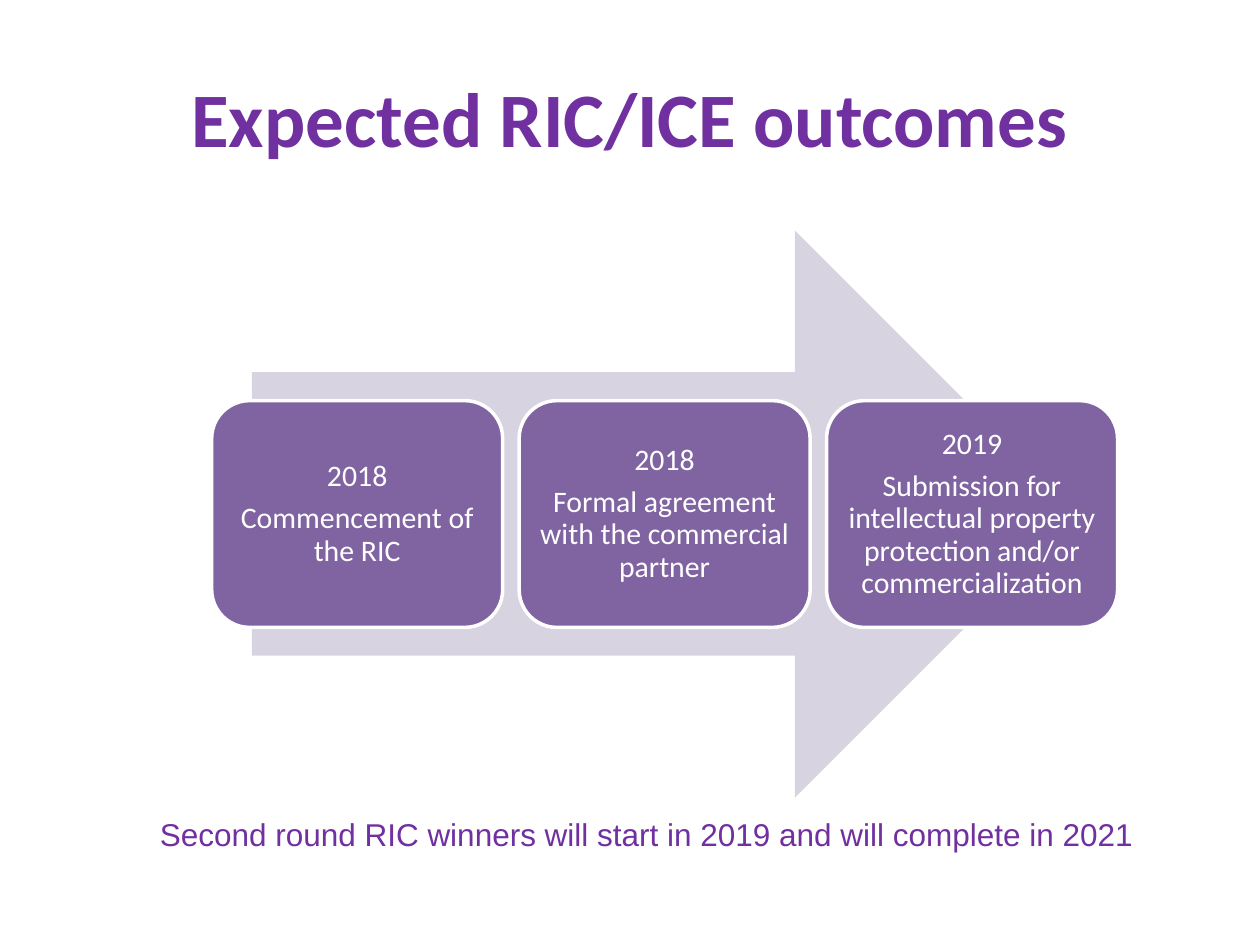
from dataclasses import dataclass

from pptx import Presentation
from pptx.dml.color import RGBColor
from pptx.enum.shapes import MSO_SHAPE as Preset
from pptx.enum.text import MSO_ANCHOR as Anchor, PP_ALIGN as Align
from pptx.shapes.autoshape import Shape
from pptx.slide import Slide
from pptx.text.text import TextFrame
from pptx.util import Inches, Pt

PURPLE = RGBColor(0x70, 0x30, 0xA0)
MILESTONE_FILL = RGBColor(0x80, 0x64, 0xA2)
ARROW_FILL = RGBColor(0xD8, 0xD3, 0xE0)
WHITE = RGBColor(0xFF, 0xFF, 0xFF)

SLIDE_W, SLIDE_H = Inches(10), Inches(7.5)
FIRST_COLUMN, COLUMN_STEP = 0.168, 0.244
MILESTONE_W, MILESTONE_H, MILESTONE_TOP = 0.231, 0.24, 0.424

FRAME_FORMAT = {
    "word_wrap": True,
    "vertical_anchor": Anchor.MIDDLE,
    "margin_left": Inches(0.07),
    "margin_right": Inches(0.07),
    "margin_top": Inches(0.07),
    "margin_bottom": Inches(0.07),
}
PARAGRAPH_FORMAT = {"alignment": Align.CENTER, "line_spacing": 0.9, "space_after": Pt(6)}


@dataclass(frozen=True)
class Milestone:
    """A dated step on the arrow."""

    year: str
    outcome: str


@dataclass(frozen=True)
class Area:
    """A rectangle given as shares of the slide's size."""

    left: float
    top: float
    width: float
    height: float

    def lengths(self) -> tuple[int, int, int, int]:
        """Return left, top, width and height in slide units."""
        return (
            int(self.left * SLIDE_W),
            int(self.top * SLIDE_H),
            int(self.width * SLIDE_W),
            int(self.height * SLIDE_H),
        )


MILESTONES = (
    Milestone("2018", "Commencement of the RIC"),
    Milestone("2018", "Formal agreement with the commercial partner"),
    Milestone("2019", "Submission for intellectual property protection and/or commercialization"),
)


def apply_format(target: object, values: dict) -> None:
    """Set each named attribute on the target."""
    for name, value in values.items():
        setattr(target, name, value)


def write_lines(
    frame: TextFrame, lines: tuple[str, ...], paragraph_format: dict,
    font_format: dict, color: RGBColor,
) -> None:
    """Fill a text frame with one formatted paragraph per line."""
    frame.text = "\n".join(lines)
    for paragraph in frame.paragraphs:
        apply_format(paragraph, paragraph_format)
        for run in paragraph.runs:
            apply_format(run.font, font_format)
            run.font.color.rgb = color


def draw_block(slide: Slide, preset: Preset, area: Area, fill: RGBColor) -> Shape:
    """Draw a plain filled shape without outline or shadow."""
    block = slide.shapes.add_shape(preset, *area.lengths())
    block.shadow.inherit = False
    block.fill.solid()
    block.fill.fore_color.rgb = fill
    block.line.fill.background()
    return block


def draw_milestone(slide: Slide, column: int, milestone: Milestone) -> None:
    """Draw one milestone card in its column of the arrow."""
    area = Area(FIRST_COLUMN + column * COLUMN_STEP, MILESTONE_TOP, MILESTONE_W, MILESTONE_H)
    card = draw_block(slide, Preset.ROUNDED_RECTANGLE, area, MILESTONE_FILL)
    card.line.color.rgb = WHITE
    card.line.width = Pt(2)
    apply_format(card.text_frame, FRAME_FORMAT)
    write_lines(
        card.text_frame, (milestone.year, milestone.outcome), PARAGRAPH_FORMAT,
        {"size": Pt(17), "name": "Calibri"}, WHITE,
    )


def main() -> None:
    """Build the outcomes slide and save it."""
    deck = Presentation()
    apply_format(deck, {"slide_width": SLIDE_W, "slide_height": SLIDE_H})
    slide = deck.slides.add_slide(deck.slide_layouts[5])

    heading = slide.shapes.title
    bounds = Area(0.05, 0.04, 0.9, 1 / 6).lengths()
    apply_format(heading, dict(zip(("left", "top", "width", "height"), bounds)))
    heading.text_frame.vertical_anchor = Anchor.MIDDLE
    write_lines(
        heading.text_frame, ("Expected RIC/ICE outcomes",), {"alignment": Align.CENTER},
        {"size": Pt(44), "name": "Calibri", "bold": True}, PURPLE,
    )

    draw_block(slide, Preset.RIGHT_ARROW, Area(0.2, 0.244, 0.656, 0.6), ARROW_FILL)
    for column, milestone in enumerate(MILESTONES):
        draw_milestone(slide, column, milestone)

    closing = slide.shapes.add_textbox(*Area(0.117, 0.856, 0.817, 0.054).lengths())
    closing.text_frame.word_wrap = True
    write_lines(
        closing.text_frame,
        ("Second round RIC winners will start in 2019 and will complete in 2021",),
        {"alignment": Align.LEFT}, {"size": Pt(18), "name": "Arial"}, PURPLE,
    )
    deck.save("out.pptx")


if __name__ == "__main__":
    main()
